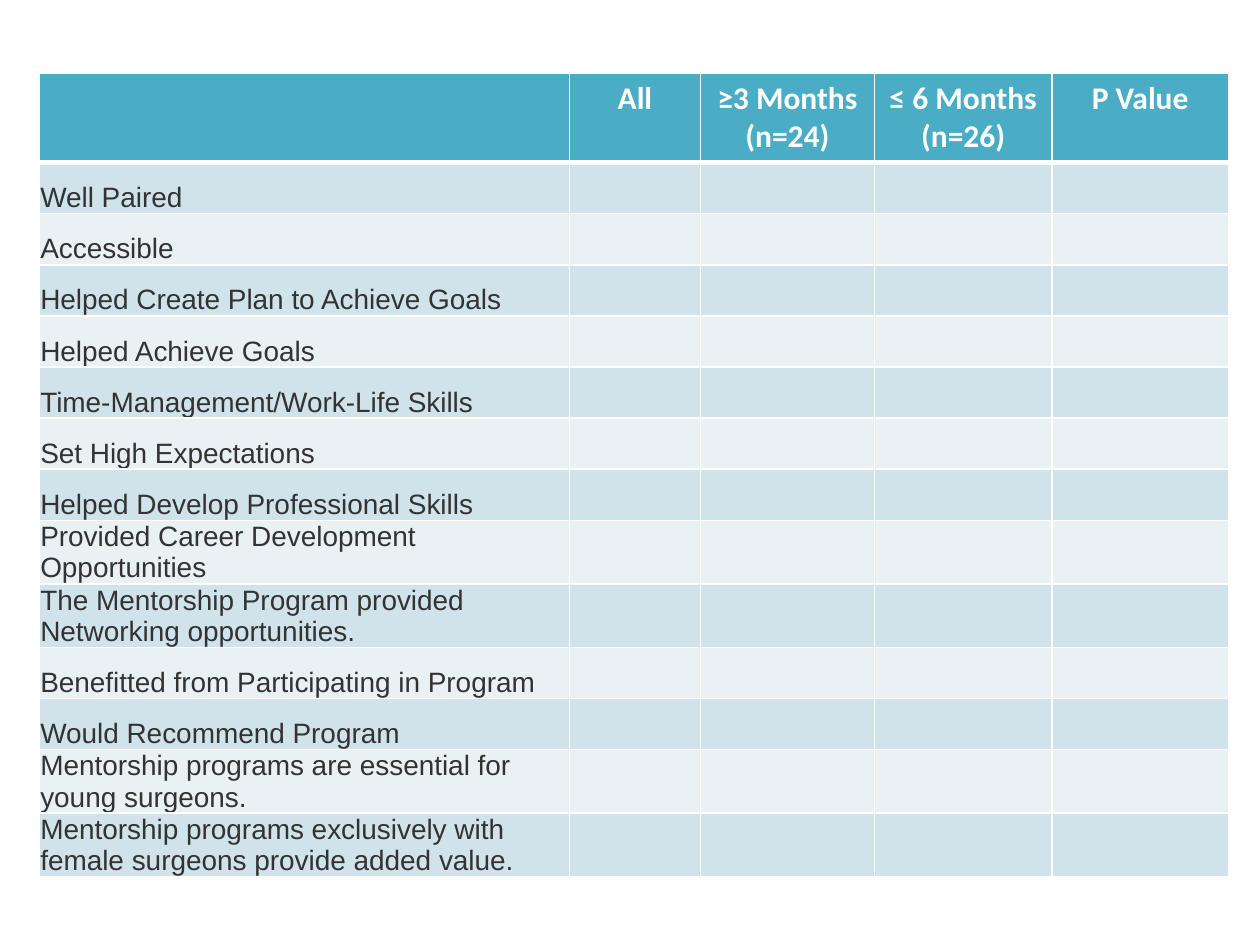
from lxml.etree import SubElement
from pptx import Presentation
from pptx.dml.color import RGBColor
from pptx.enum.text import MSO_ANCHOR, PP_ALIGN
from pptx.oxml.ns import qn
from pptx.util import Inches, Pt

WHITE = RGBColor(0xFF, 0xFF, 0xFF)
TEAL = RGBColor(0x4B, 0xAC, 0xC6)
BANDS = (RGBColor(0xE9, 0xF1, 0xF5), RGBColor(0xD0, 0xE3, 0xEA))
DARK = RGBColor(0x33, 0x33, 0x33)

COLUMNS = (4.21, 1.04, 1.38, 1.41, 1.4)
HEADINGS = ("", "All", "≥3 Months\n(n=24)", "≤ 6 Months\n(n=26)", "P Value")
STATEMENTS = (
    "Well Paired",
    "Accessible",
    "Helped Create Plan to Achieve Goals",
    "Helped Achieve Goals",
    "Time-Management/Work-Life Skills",
    "Set High Expectations",
    "Helped Develop Professional Skills",
    "Provided Career Development Opportunities",
    "The Mentorship Program provided Networking opportunities.",
    "Benefitted from Participating in Program",
    "Would Recommend Program",
    "Mentorship programs are essential for young surgeons.",
    "Mentorship programs exclusively with female surgeons provide added value.",
)


def set_borders(cell, top, bottom):
    tc_pr = cell._tc.get_or_add_tcPr()
    for side, width in (("L", 1), ("R", 1), ("T", top), ("B", bottom)):
        ln = SubElement(tc_pr, qn(f"a:ln{side}"), w=str(Pt(width)))
        fill = SubElement(ln, qn("a:solidFill"))
        SubElement(fill, qn("a:srgbClr"), val=str(WHITE))


def set_margins(cell, side, top, bottom):
    cell.margin_left = cell.margin_right = Inches(side)
    cell.margin_top = Inches(top)
    cell.margin_bottom = Inches(bottom)


def set_text(cell, text, font, size, color, bold, align):
    cell.text = text
    for p in cell.text_frame.paragraphs:
        p.alignment = align
        p.font.name = font
        p.font.size = Pt(size)
        p.font.bold = bold
        p.font.color.rgb = color


def fill_cell(cell, color):
    cell.fill.solid()
    cell.fill.fore_color.rgb = color


def heading_cell(cell, text):
    set_borders(cell, 1, 3)
    fill_cell(cell, TEAL)
    set_margins(cell, 0.07, 0.05, 0.05)
    set_text(cell, text, "Calibri", 18, WHITE, True, PP_ALIGN.CENTER)


def body_cell(cell, row, text):
    set_borders(cell, 3 if row == 1 else 1, 1)
    fill_cell(cell, BANDS[row % 2])
    if text:
        set_margins(cell, 0.01, 0.01, 0)
        cell.vertical_anchor = MSO_ANCHOR.BOTTOM
        set_text(cell, text, "Arial", 16, DARK, False, PP_ALIGN.LEFT)
    else:
        set_margins(cell, 0.07, 0.05, 0.05)
        set_text(cell, "", "Calibri", 18, DARK, False, PP_ALIGN.CENTER)


def add_survey_table(s):
    table = s.shapes.add_table(
        len(STATEMENTS) + 1, len(COLUMNS),
        Inches(0.31), Inches(0.58), Inches(sum(COLUMNS)), Inches(5.67),
    ).table
    for column, width in zip(table.columns, COLUMNS):
        column.width = Inches(width)
    for col, heading in enumerate(HEADINGS):
        heading_cell(table.cell(0, col), heading)
    for row, statement in enumerate(STATEMENTS, 1):
        for col in range(len(COLUMNS)):
            body_cell(table.cell(row, col), row, "" if col else statement)


def main():
    prs = Presentation()
    prs.slide_width, prs.slide_height = Inches(10), Inches(7.5)
    s = prs.slides.add_slide(prs.slide_layouts[6])
    add_survey_table(s)
    prs.save("out.pptx")


if __name__ == "__main__":
    main()
